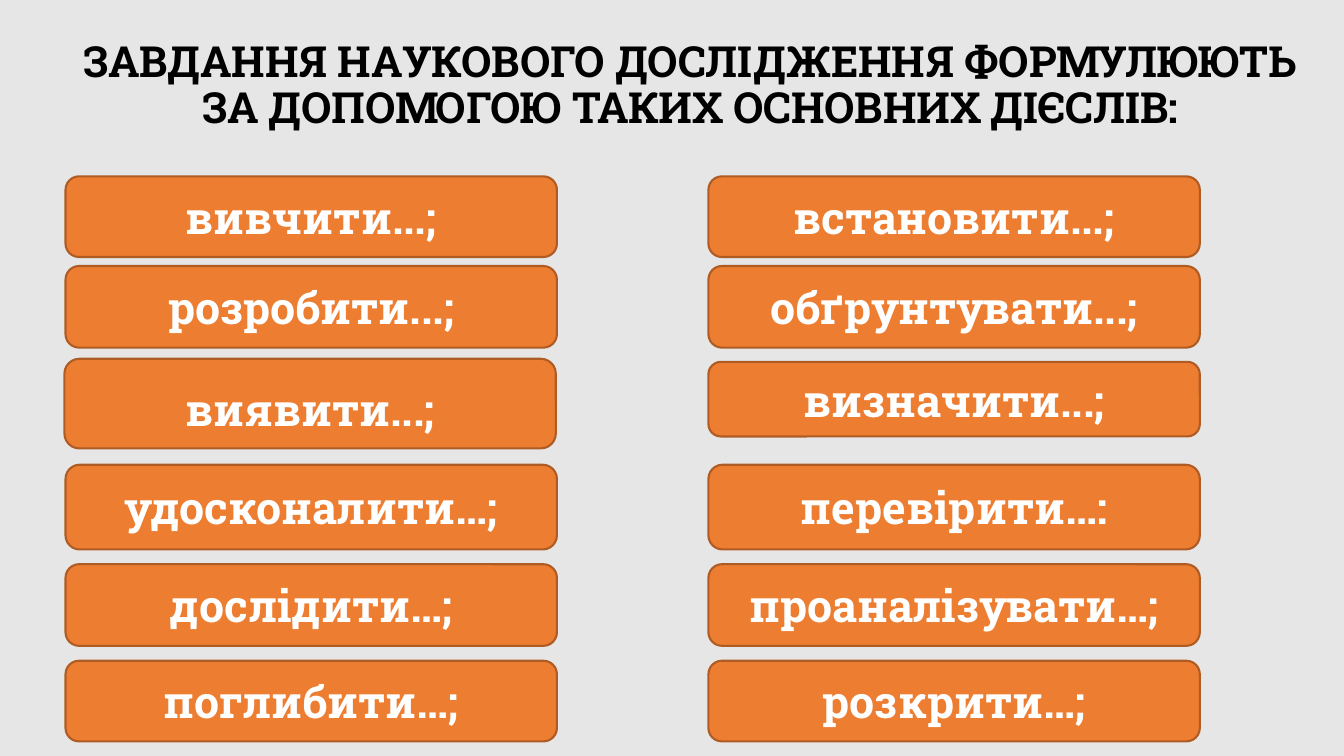
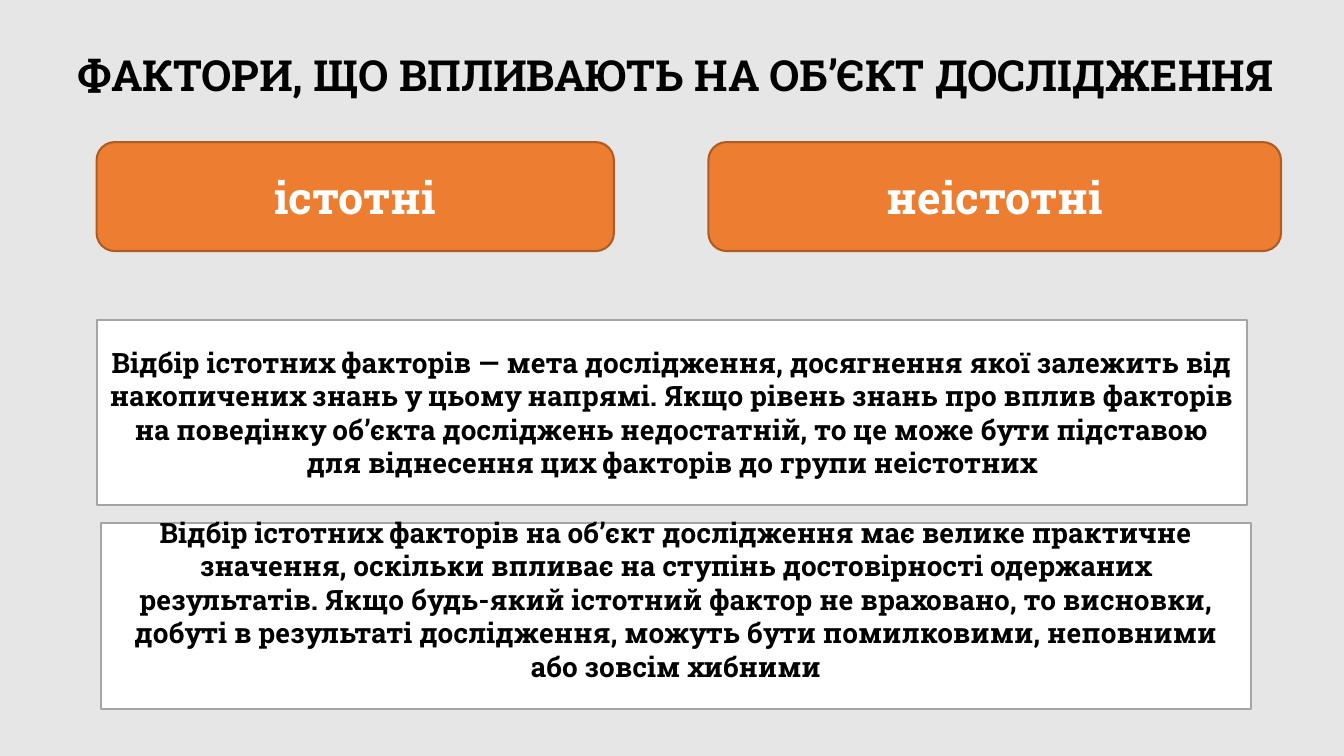
from pptx import Presentation
from pptx.dml.color import RGBColor
from pptx.enum.shapes import MSO_SHAPE as Shape
from pptx.enum.text import MSO_ANCHOR as Anchor, MSO_AUTO_SIZE as AutoSize, PP_ALIGN as Align
from pptx.util import Pt

FONT = "Roboto Slab"
COLOURS = {
    "background": "E7E6E6",
    "orange": "ED7D31",
    "orange_line": "AF5C24",
    "white": "FFFFFF",
    "grey_line": "A5A5A5",
    "black": "000000",
}


def colour(name):
    return RGBColor.from_string(COLOURS[name])


def write_text(shape, text, size=32, color="black", line_spacing=1.0,
               space_before=0, bottom_inset=3.6):
    """Put one bold, centred paragraph in the middle of a shape."""
    frame = shape.text_frame
    frame.word_wrap = True
    frame.auto_size = AutoSize.NONE
    frame.vertical_anchor = Anchor.MIDDLE
    frame.margin_bottom = Pt(bottom_inset)
    paragraph = frame.paragraphs[0]
    paragraph.alignment = Align.CENTER
    paragraph.line_spacing = line_spacing
    paragraph.space_before = Pt(space_before)
    run = paragraph.add_run()
    run.text = text
    run.font.name = FONT
    run.font.size = Pt(size)
    run.font.bold = True
    run.font.color.rgb = colour(color)


class Deck:
    """Holds the presentation, its style and the current slide."""

    def __init__(self):
        self.presentation = Presentation()
        self.presentation.slide_width = Pt(960)
        self.presentation.slide_height = Pt(540)
        fill = self.presentation.slide_master.background.fill
        fill.solid()
        fill.fore_color.rgb = colour("background")
        self.slide = None

    def add_slide(self, title, left, top, width, height):
        layout = self.presentation.slide_layouts.get_by_name("Title Only")
        self.slide = self.presentation.slides.add_slide(layout)
        shape = self.slide.shapes.title
        shape.left, shape.top = Pt(left), Pt(top)
        shape.width, shape.height = Pt(width), Pt(height)
        write_text(shape, title, size=30.6, line_spacing=0.9)

    def add_box(self, kind, fill, line, left, top, width, height):
        shape = self.slide.shapes.add_shape(
            kind, Pt(left), Pt(top), Pt(width), Pt(height))
        shape.shadow.inherit = False
        shape.fill.solid()
        shape.fill.fore_color.rgb = colour(fill)
        shape.line.color.rgb = colour(line)
        shape.line.width = Pt(1.5)
        return shape

    def add_button(self, text, left, top, width, height, **text_format):
        shape = self.add_box(Shape.ROUNDED_RECTANGLE, "orange", "orange_line",
                             left, top, width, height)
        write_text(shape, text, color="white", **text_format)

    def add_panel(self, text, left, top, width, height, **text_format):
        shape = self.add_box(Shape.RECTANGLE, "white", "grey_line",
                             left, top, width, height)
        write_text(shape, text, size=20, **text_format)


def build_verbs_slide(deck):
    deck.add_slide("ЗАВДАННЯ НАУКОВОГО ДОСЛІДЖЕННЯ ФОРМУЛЮЮТЬ "
                   "ЗА ДОПОМОГОЮ ТАКИХ ОСНОВНИХ ДІЄСЛІВ:", 34, 20, 918, 83.5)
    left_column, right_column, width = 46.8, 506, 351

    # Rows of equal pairs: top, height, left verb, right verb
    rows = [
        (126, 57.6, "вивчити...;", "встановити...;"),
        (190, 58.3, "розробити...;", "обґрунтувати...;"),
        (332, 60.5, "удосконалити…;", "перевірити…:"),
        (403, 58.3, "дослідити…;", "проаналізувати…;"),
        (472, 57.6, "поглибити…;", "розкрити…;"),
    ]
    for top, height, left_verb, right_verb in rows:
        deck.add_button(left_verb, left_column, top, width, height)
        deck.add_button(right_verb, right_column, top, width, height)

    # Third row, whose buttons differ in height
    deck.add_button("виявити...;", 46, 256.3, width, 64,
                    line_spacing=1.2, space_before=10)
    deck.add_button("визначити...;", right_column, 258.5, width, 53.3)


def build_factors_slide(deck):
    deck.add_slide("ФАКТОРИ, ЩО ВПЛИВАЮТЬ НА ОБ’ЄКТ ДОСЛІДЖЕННЯ", 15, 17.3, 935.5, 77)

    # Two groups of factors
    deck.add_button("істотні", 69, 101.5, 369.5, 77.8)
    deck.add_button("неістотні", 506, 101.5, 409, 77.8)

    # Explanations
    panel_width, panel_height = 821.5, 132.5
    deck.add_panel(
        "Відбір істотних факторів — мета дослідження, досягнення якої залежить від "
        "накопичених знань у цьому напрямі. Якщо рівень знань про вплив факторів на "
        "поведінку об’єкта досліджень недостатній, то це може бути підставою для "
        "віднесення цих факторів до групи неістотних",
        69, 228.3, panel_width, panel_height)
    deck.add_panel(
        "Відбір істотних факторів на об’єкт дослідження має велике практичне значення, "
        "оскільки впливає на ступінь достовірності одержаних результатів. Якщо будь-який "
        "істотний фактор не враховано, то висновки, добуті в результаті дослідження, "
        "можуть бути помилковими, неповними або зовсім хибними",
        72, 373.7, panel_width, panel_height, bottom_inset=27.6)


def main():
    deck = Deck()
    build_verbs_slide(deck)
    build_factors_slide(deck)
    deck.presentation.save("out.pptx")


if __name__ == "__main__":
    main()
